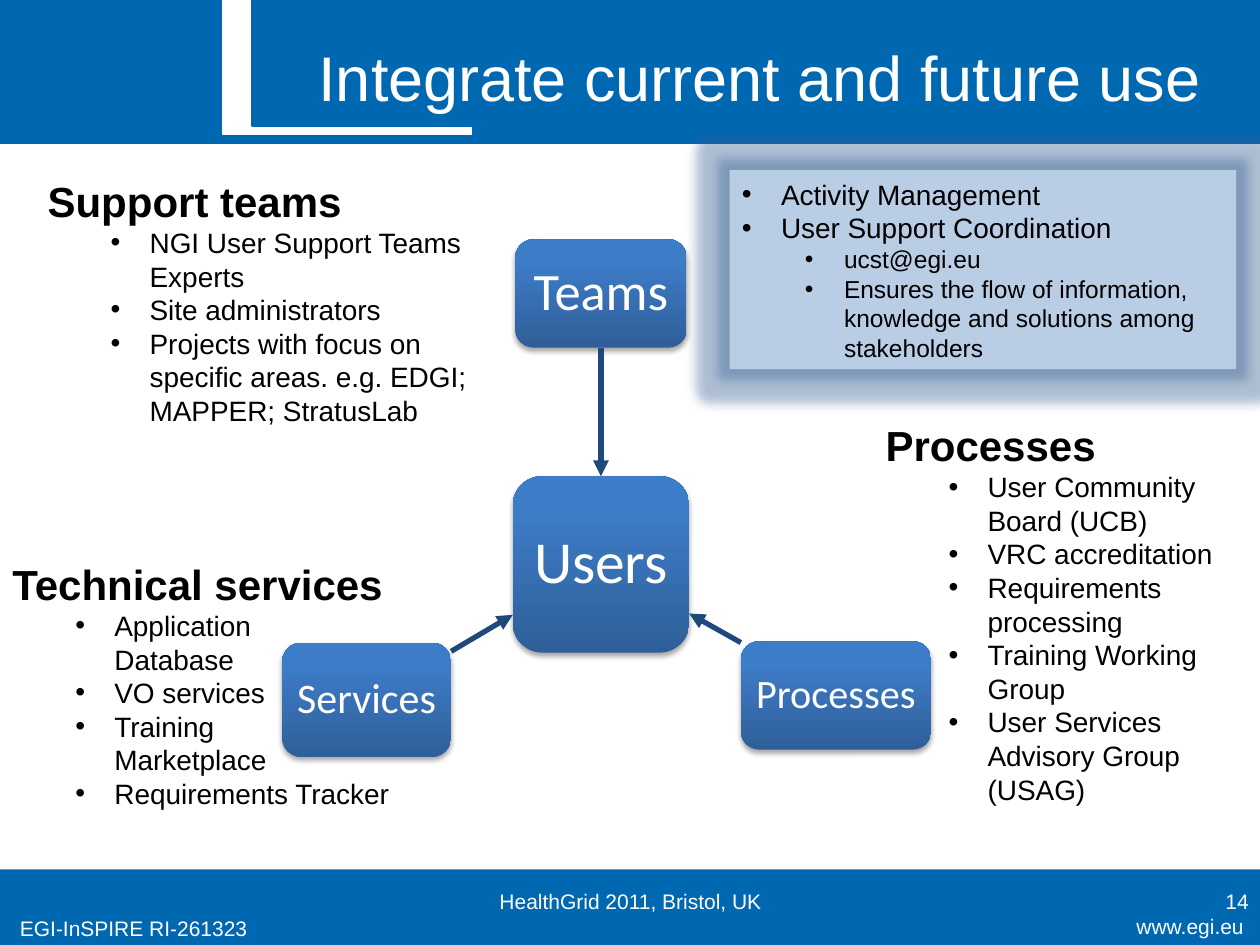
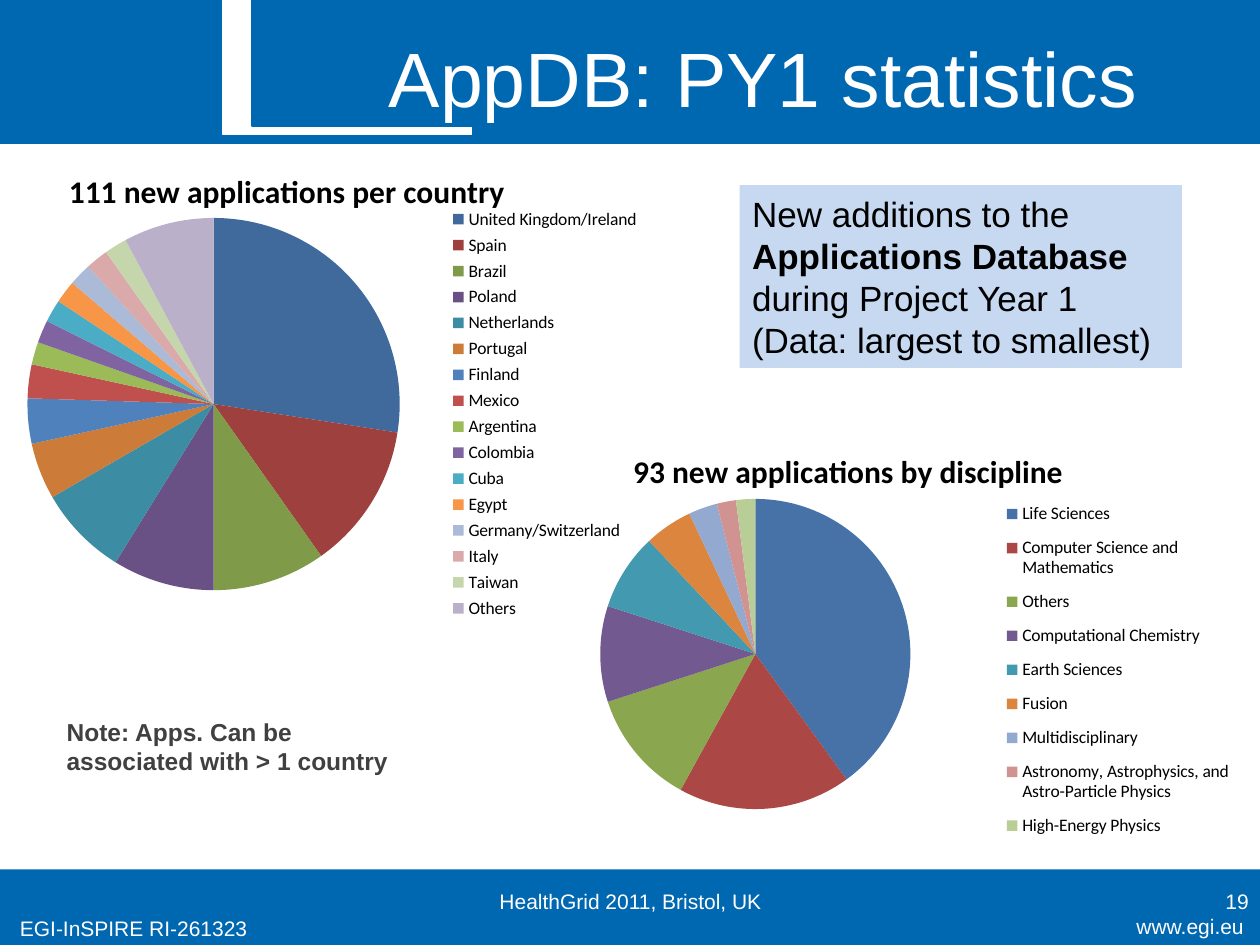
from lxml.etree import SubElement
from pptx import Presentation
from pptx.chart.data import CategoryChartData
from pptx.dml.color import RGBColor
from pptx.enum.chart import XL_CHART_TYPE, XL_LEGEND_POSITION
from pptx.enum.shapes import MSO_CONNECTOR, MSO_SHAPE
from pptx.enum.text import MSO_ANCHOR, PP_ALIGN
from pptx.oxml import parse_xml
from pptx.oxml.ns import nsdecls, qn
from pptx.util import Inches, Pt

BLUE, NAVY, WHITE, BLACK = "0067B1", "1F497D", "FFFFFF", "000000"
HEADING, BODY, SMALL = 24, 16, 14
BULLET_HANG = 0.31
COUNTRIES = [
    ("United Kingdom/Ireland", 28, "40699C"), ("Spain", 13, "9E413E"),
    ("Brazil", 10, "7F9A48"), ("Poland", 9, "695185"),
    ("Netherlands", 8, "3C8DA3"), ("Portugal", 5, "CC7B38"),
    ("Finland", 4, "4F81BD"), ("Mexico", 3, "C0504D"),
    ("Argentina", 2, "9BBB59"), ("Colombia", 2, "8064A2"),
    ("Cuba", 2, "4BACC6"), ("Egypt", 2, "F79646"),
    ("Germany/Switzerland", 2, "AABAD7"), ("Italy", 2, "D9AAA9"),
    ("Taiwan", 2, "C6D6AC"), ("Others", 8, "BAB0C9"),
]
DISCIPLINES = [
    ("Life Sciences", 40, "4672A8"),
    ("Computer Science and Mathematics", 18, "AB4744"),
    ("Others", 12, "8AA64F"), ("Computational Chemistry", 10, "725990"),
    ("Earth Sciences", 8, "4299B0"), ("Fusion", 5, "DC853E"),
    ("Multidisciplinary", 3, "93A9CF"),
    ("Astronomy, Astrophysics, and Astro-Particle Physics", 2, "D19392"),
    ("High-Energy Physics", 2, "B9CD96"),
]


def rgb(color):
    return RGBColor.from_string(color)


def inches(box):
    return [Inches(v) for v in box]


def style_font(font, size, color, bold=False, name="Arial"):
    font.size, font.bold, font.name = Pt(size), bold, name
    font.color.rgb = rgb(color)


def paint(sp, fill, line=None):
    sp.shadow.inherit = False
    sp.fill.solid()
    sp.fill.fore_color.rgb = rgb(fill)
    if line:
        sp.line.color.rgb = rgb(line)
        sp.line.width = Pt(0.75)
    else:
        sp.line.fill.background()


def add_rect(s, box, fill, line=None):
    sp = s.shapes.add_shape(MSO_SHAPE.RECTANGLE, *inches(box))
    paint(sp, fill, line)
    return sp


def add_text(s, box, text, size, color=WHITE, align=PP_ALIGN.LEFT,
             anchor=MSO_ANCHOR.TOP, bold=False):
    tf = s.shapes.add_textbox(*inches(box)).text_frame
    tf.word_wrap = True
    tf.vertical_anchor = anchor
    p = tf.paragraphs[0]
    p.text = text
    p.alignment = align
    style_font(p.runs[0].font, size, color, bold)


def fill_list(tf, items):
    """Write (text, size, indent) items; an indent of None marks a heading."""
    tf.word_wrap = True
    for i, (text, size, indent) in enumerate(items):
        p = tf.add_paragraph() if i else tf.paragraphs[0]
        p.text = text
        p.alignment = PP_ALIGN.LEFT
        if indent is not None:
            pPr = p._p.get_or_add_pPr()
            pPr.set("marL", str(Inches(indent)))
            pPr.set("indent", str(-Inches(BULLET_HANG)))
            SubElement(pPr, qn("a:buFont")).set("typeface", "Arial")
            SubElement(pPr, qn("a:buChar")).set("char", "•")
        for r in p.runs:
            style_font(r.font, size, BLACK, indent is None)


def add_topic(s, box, heading, points):
    tf = s.shapes.add_textbox(*inches(box)).text_frame
    fill_list(tf, [(heading, HEADING, None)] + [(t, BODY, 0.81) for t in points])


def bezier(p0, p1, p2, p3, steps=40):
    for i in range(1, steps + 1):
        t = i / steps
        u = 1 - t
        yield tuple(u**3 * a + 3 * u * u * t * b + 3 * u * t * t * c + t**3 * d
                    for a, b, c, d in zip(p0, p1, p2, p3))


def add_header_band(s):
    left, mid, right, bottom = 1.77, 2.56, 3.74, 1.07
    add_rect(s, (0, 0, 10, 1.14), BLUE, BLUE)
    add_rect(s, (left, 0, right - left, bottom), WHITE, WHITE)
    curve = bezier((left, bottom), (mid, bottom), (left, 0), (mid, 0))
    builder = s.shapes.build_freeform(right, 0, scale=Inches(1))
    builder.add_line_segments([(right, bottom), (left, bottom), *curve])
    paint(builder.convert_to_shape(), BLUE, BLUE)


def add_footer(s, number):
    add_rect(s, (0, 6.9, 10, 0.6), BLUE)
    middle = MSO_ANCHOR.MIDDLE
    add_text(s, (8.39, 7.2, 1.58, 0.31), "www.egi.eu", 12, align=PP_ALIGN.RIGHT)
    add_text(s, (0.06, 7.22, 2.5, 0.31), "EGI-InSPIRE RI-261323", 12)
    add_text(s, (3.42, 6.95, 3.17, 0.4), "HealthGrid 2011, Bristol, UK", 12,
             align=PP_ALIGN.CENTER, anchor=middle)
    add_text(s, (7.68, 6.95, 2.33, 0.4), str(number), 12,
             align=PP_ALIGN.RIGHT, anchor=middle)


def add_base_slide(prs, title, title_box, title_size, number):
    s = prs.slides.add_slide(prs.slide_layouts[6])
    add_header_band(s)
    add_footer(s, number)
    add_text(s, title_box, title, title_size, align=PP_ALIGN.CENTER,
             anchor=MSO_ANCHOR.MIDDLE)
    return s


def set_effect(sp, effect):
    """Replace the shape's effects with one effect given as XML."""
    sp.shadow.inherit = False
    sp._element.spPr.find(qn("a:effectLst")).append(parse_xml(effect))


def add_coordination_box(s, box):
    sp = add_rect(s, box, "B9CDE5")
    set_effect(sp, f'<a:glow {nsdecls("a")} rad="{Inches(0.18)}">'
                   '<a:srgbClr val="376092"><a:alpha val="40000"/>'
                   '</a:srgbClr></a:glow>')
    sp.text_frame.vertical_anchor = MSO_ANCHOR.MIDDLE
    fill_list(sp.text_frame, [
        ("Activity Management", BODY, 0.31),
        ("User Support Coordination", BODY, 0.31),
        ("ucst@egi.eu", SMALL, 0.81),
        ("Ensures the flow of information, knowledge and solutions among "
         "stakeholders", SMALL, 0.81)])


def add_node(s, box, label, size):
    sp = s.shapes.add_shape(MSO_SHAPE.ROUNDED_RECTANGLE, *inches(box))
    sp.line.fill.background()
    sp.fill.gradient()
    sp.fill.gradient_angle = 90
    for stop, color, pos in zip(sp.fill.gradient_stops, ("2F5F99", "3D7CC7"), (0, 0.8)):
        stop.color.rgb = rgb(color)
        stop.position = pos
    set_effect(sp, f'<a:outerShdw {nsdecls("a")} blurRad="{Pt(3.1)}" '
                   f'dist="{Pt(1.8)}" dir="5400000" rotWithShape="0">'
                   '<a:srgbClr val="000000"><a:alpha val="35000"/>'
                   '</a:srgbClr></a:outerShdw>')
    tf = sp.text_frame
    tf.margin_left = tf.margin_right = 0
    tf.word_wrap = False
    tf.vertical_anchor = MSO_ANCHOR.MIDDLE
    p = tf.paragraphs[0]
    p.text = label
    p.alignment = PP_ALIGN.CENTER
    p.line_spacing = 0.9
    style_font(p.runs[0].font, size, WHITE, name="Calibri")
    return sp


def add_arrow(s, start, end):
    c = s.shapes.add_connector(MSO_CONNECTOR.STRAIGHT, *inches(start + end))
    c.line.color.rgb = rgb(NAVY)
    c.line.width = Pt(3)
    SubElement(c.line._get_or_add_ln(), qn("a:tailEnd")).set("type", "triangle")
    SubElement(c._element.spPr, qn("a:effectLst"))
    return c


def add_user_diagram(s, x, y):
    """Place the four linked nodes from the top left corner (x, y)."""
    users = add_node(s, (x + 1.83, y + 1.88, 1.4, 1.4), "Users", 34)
    teams = add_node(s, (x + 1.85, y, 1.36, 0.86), "Teams", 30)
    add_node(s, (x + 3.64, y + 3.19, 1.51, 0.86), "Processes", 23)
    add_node(s, (x, y + 3.2, 1.34, 0.91), "Services", 24)
    down = add_arrow(s, (x + 2.53, y + 0.86), (x + 2.53, y + 1.88))
    down.begin_connect(teams, 2)
    down.end_connect(users, 0)
    add_arrow(s, (x + 3.64, y + 3.2), (x + 3.23, y + 2.97))
    add_arrow(s, (x + 1.34, y + 3.27), (x + 1.83, y + 2.98))


def set_layout(parent, index, x, y, w=None, h=None, inner=False):
    """Give a chart part a manual layout in fractions of the chart."""
    for old in parent.findall(qn("c:layout")):
        parent.remove(old)
    layout = parse_xml(f'<c:layout {nsdecls("c")}><c:manualLayout/></c:layout>')
    values = [("layoutTarget", "inner")] if inner else []
    values += [("xMode", "edge"), ("yMode", "edge"), ("x", x), ("y", y)]
    values += [("w", w), ("h", h)] if w else []
    for tag, value in values:
        SubElement(layout[0], qn("c:" + tag)).set("val", str(value))
    parent.insert(index, layout)


def add_pie(s, box, title, data, title_at, plot, legend_box):
    names, values, colors = zip(*data)
    cd = CategoryChartData()
    cd.categories = names
    cd.add_series("Series 1", values)
    chart = s.shapes.add_chart(XL_CHART_TYPE.PIE, *inches(box), cd).chart
    style_font(chart.font, 10, BLACK, name="Calibri")
    chart._chartSpace.find(qn("c:txPr")).addprevious(parse_xml(
        f'<c:spPr {nsdecls("c", "a")}><a:noFill/><a:ln><a:noFill/></a:ln></c:spPr>'))

    chart.has_title = True
    tf = chart.chart_title.text_frame
    tf.text = title
    style_font(tf.paragraphs[0].runs[0].font, 18, BLACK, True, "Calibri")
    set_layout(chart.chart_title._element, 1, *title_at)

    chart.has_legend = True
    chart.legend.position = XL_LEGEND_POSITION.RIGHT
    chart.legend.include_in_layout = False
    style_font(chart.legend.font, 10, BLACK, name="Calibri")
    set_layout(chart.legend._element, 1, *legend_box)

    set_layout(chart._chartSpace.chart.plotArea, 0, *plot, inner=True)
    chart.plots[0].vary_by_categories = True
    for i, color in enumerate(colors):
        fill = chart.plots[0].series[0].points[i].format.fill
        fill.solid()
        fill.fore_color.rgb = rgb(color)


def add_database_box(s, box):
    sp = add_rect(s, box, "C6D9F1")
    tf = sp.text_frame
    tf.word_wrap = True
    tf.vertical_anchor = MSO_ANCHOR.MIDDLE
    lines = [[("New additions to the ", False), ("Applications Database", True),
              (" during Project Year 1", False)],
             [("(Data: largest to smallest)", False)]]
    for i, line in enumerate(lines):
        p = tf.add_paragraph() if i else tf.paragraphs[0]
        p.alignment = PP_ALIGN.LEFT
        for text, bold in line:
            r = p.add_run()
            r.text = text
            style_font(r.font, 20, BLACK, bold)


def build_use_slide(prs):
    s = add_base_slide(prs, "Integrate current and future use",
                       (2.09, 0.13, 7.88, 0.95), 36, 14)
    add_coordination_box(s, (5.79, 1.35, 4.02, 1.58))
    add_user_diagram(s, 2.24, 1.9)
    add_topic(s, (0.28, 1.34, 3.94, 2.12), "Support teams", [
        "NGI User Support Teams Experts", "Site administrators",
        "Projects with focus on specific areas. e.g. EDGI; MAPPER; StratusLab"])
    add_topic(s, (6.93, 3.28, 3.19, 3.3), "Processes", [
        "User Community Board (UCB)", "VRC accreditation",
        "Requirements processing", "Training Working Group",
        "User Services Advisory Group (USAG)"])
    add_topic(s, (0, 4.38, 4.13, 2.12), "Technical services", [
        "Application\nDatabase", "VO services", "Training\nMarketplace",
        "Requirements Tracker"])


def build_statistics_slide(prs):
    s = add_base_slide(prs, "AppDB: PY1 statistics",
                       (2.32, 0.13, 7.48, 0.95), 44, 19)
    add_text(s, (0.43, 5.64, 2.91, 0.57),
             "Note: Apps. Can be associated with > 1 country", SMALL, "404040",
             bold=True)
    add_pie(s, (-0.03, 1.1, 5.31, 3.94), "111 new applications per country",
            COUNTRIES, (0.1, 0.05), (0.04, 0.16, 0.57, 0.75),
            (0.65, 0.13, 0.34, 0.85))
    add_pie(s, (4.19, 3.2, 5.64, 3.62), "93 new applications by discipline",
            DISCIPLINES, (0.14, 0.09), (0.06, 0.21, 0.52, 0.68),
            (0.66, 0.19, 0.34, 0.79))
    add_database_box(s, (5.87, 1.47, 3.51, 1.45))


def main():
    prs = Presentation()
    prs.slide_width, prs.slide_height = Inches(10), Inches(7.5)
    build_use_slide(prs)
    build_statistics_slide(prs)
    prs.save("out.pptx")


if __name__ == "__main__":
    main()
